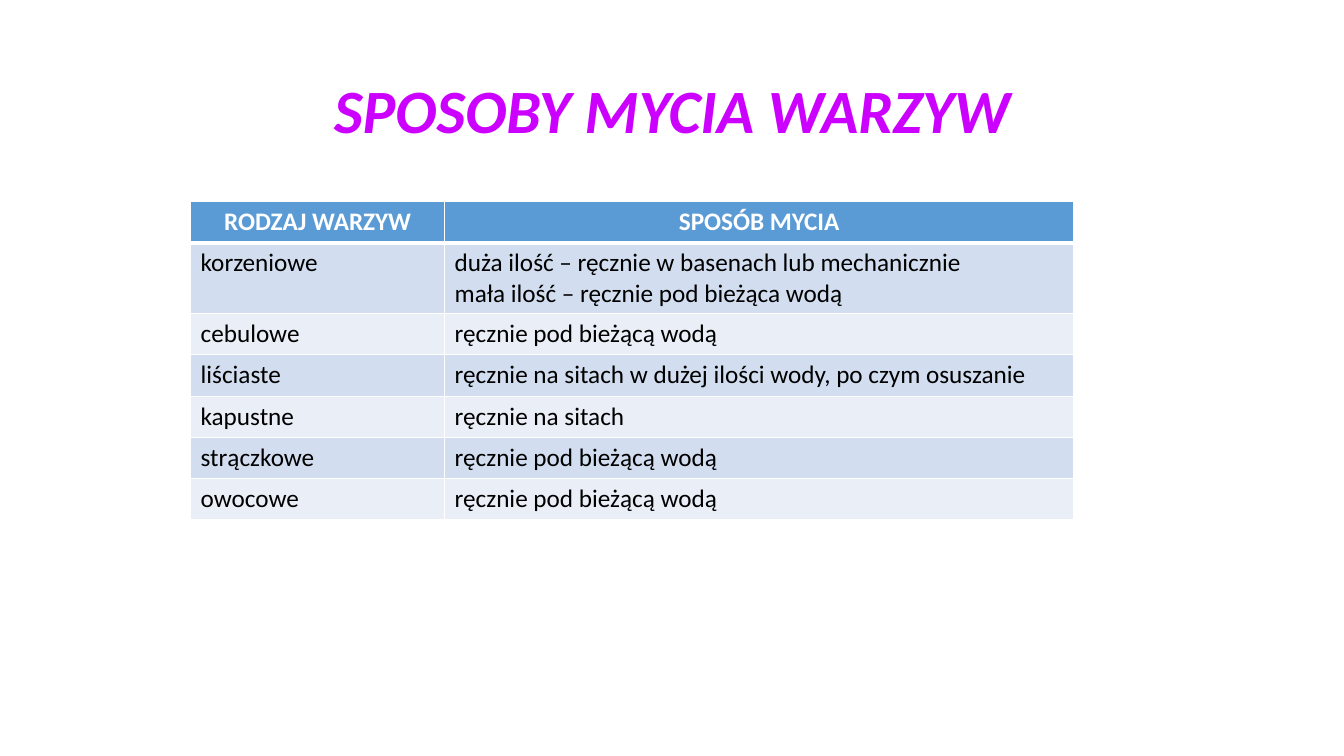
from dataclasses import dataclass

from lxml.etree import SubElement
from pptx import Presentation
from pptx.dml.color import RGBColor
from pptx.enum.text import MSO_ANCHOR, PP_ALIGN
from pptx.oxml.ns import qn
from pptx.util import Inches, Pt

COLORS = {
    "title": "CC00FF",
    "header": "5B9BD5",
    "odd": "D2DEEF",
    "even": "EAEFF7",
    "text": "000000",
    "white": "FFFFFF",
}
COLUMN_WIDTHS = (2.52, 6.24)
LINE_HEIGHT = 0.28
ROW_HEIGHT = 0.41


@dataclass
class WashingRow:
    vegetable: str
    methods: list[str]


HEADER = WashingRow("RODZAJ WARZYW", ["SPOSÓB MYCIA"])
ROWS = [
    WashingRow("korzeniowe", ["duża ilość – ręcznie w basenach lub mechanicznie",
                              "mała ilość – ręcznie pod bieżąca wodą"]),
    WashingRow("cebulowe", ["ręcznie pod bieżącą wodą"]),
    WashingRow("liściaste", ["ręcznie na sitach w dużej ilości wody, po czym osuszanie"]),
    WashingRow("kapustne", ["ręcznie na sitach"]),
    WashingRow("strączkowe", ["ręcznie pod bieżącą wodą"]),
    WashingRow("owocowe", ["ręcznie pod bieżącą wodą"]),
]


def write(frame, lines: list[str], color: str, align: PP_ALIGN, **font_format) -> None:
    """Fill a text frame with one paragraph per line."""
    for index, line in enumerate(lines):
        para = frame.paragraphs[0] if index == 0 else frame.add_paragraph()
        para.alignment = align
        span = para.add_run()
        span.text = line
        span.font.color.rgb = RGBColor.from_string(COLORS[color])
        for name, value in {"name": "Calibri", **font_format}.items():
            setattr(span.font, name, value)


def add_borders(cell, bottom: float, top: float) -> None:
    """Draw white borders around a cell, widths in points."""
    properties = cell._tc.get_or_add_tcPr()
    widths = {"a:lnL": 1, "a:lnR": 1, "a:lnT": top, "a:lnB": bottom}
    for tag, width in widths.items():
        line = SubElement(properties, qn(tag), w=str(Pt(width)))
        fill = SubElement(line, qn("a:solidFill"))
        SubElement(fill, qn("a:srgbClr"), val=COLORS["white"])


def add_title(page) -> None:
    box = page.shapes.add_textbox(Inches(0.92), Inches(0.4), Inches(11.5), Inches(1.45))
    frame = box.text_frame
    frame.word_wrap = True
    frame.vertical_anchor = MSO_ANCHOR.MIDDLE
    write(frame, ["SPOSOBY MYCIA WARZYW"], "title", PP_ALIGN.CENTER,
          size=Pt(44), bold=True, italic=True)
    frame.paragraphs[0].line_spacing = 0.9


def add_washing_table(page) -> None:
    rows = [HEADER, *ROWS]
    table = page.shapes.add_table(
        len(rows), len(COLUMN_WIDTHS), Inches(1.89), Inches(2),
        Inches(sum(COLUMN_WIDTHS)), Inches(ROW_HEIGHT * len(rows) + LINE_HEIGHT)).table
    for column, width in zip(table.columns, COLUMN_WIDTHS):
        column.width = Inches(width)

    for index, row in enumerate(rows):
        is_header = index == 0
        extra_lines = len(row.methods) - 1
        table.rows[index].height = Inches(ROW_HEIGHT + extra_lines * LINE_HEIGHT)
        fill = "header" if is_header else "odd" if index % 2 else "even"
        for column, lines in enumerate([[row.vegetable], row.methods]):
            cell = table.cell(index, column)
            add_borders(cell, bottom=3 if is_header else 1, top=3 if index == 1 else 1)
            cell.fill.solid()
            cell.fill.fore_color.rgb = RGBColor.from_string(COLORS[fill])
            write(cell.text_frame, lines, "white" if is_header else "text",
                  PP_ALIGN.CENTER if is_header else PP_ALIGN.LEFT,
                  size=Pt(18), bold=is_header)


def main() -> None:
    deck = Presentation()
    deck.slide_width, deck.slide_height = Inches(13.33), Inches(7.5)
    page = deck.slides.add_slide(deck.slide_layouts[6])
    # Heading
    add_title(page)
    # Vegetables and how to wash them
    add_washing_table(page)
    deck.save("out.pptx")


if __name__ == "__main__":
    main()
